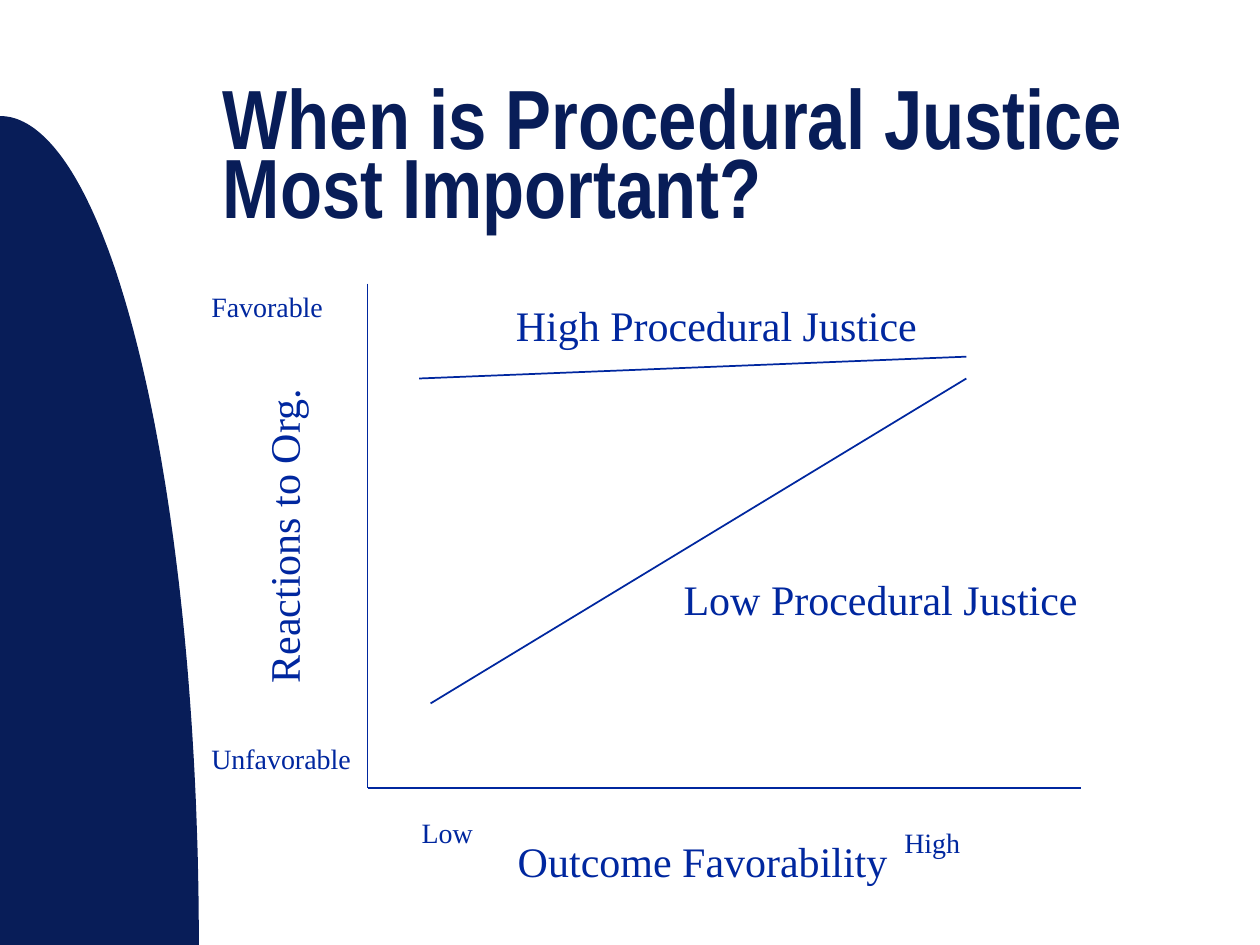
import math

from pptx import Presentation
from pptx import util as u
from pptx.dml.color import RGBColor
from pptx.enum import shapes, text
from pptx.oxml import ns, xmlchemy

NAVY = RGBColor(0x08, 0x1D, 0x58)
BLUE = RGBColor(0x00, 0x27, 0x9F)
HEADING_FONT, LABEL_FONT = "Arial Narrow", "Times New Roman"


def write(frame, wording, size=24, font=LABEL_FONT, color=BLUE, bold=False,
          align=text.PP_ALIGN.LEFT, spacing=None):
    """Fill a text frame with one formatted paragraph."""
    frame.word_wrap = True
    paragraph = frame.paragraphs[0]
    paragraph.alignment = align
    paragraph.line_spacing = spacing
    run = paragraph.add_run()
    run.text = wording
    run.font.size, run.font.name = u.Pt(size), font
    run.font.bold, run.font.color.rgb = bold, color


def add_label(slide, wording, left, top, width, size=24, rotation=0, **style):
    """Place a one-line label, with a height that follows its text size."""
    height = 1.27 if size == 24 else 0.94
    label = slide.shapes.add_textbox(u.Cm(left), u.Cm(top), u.Cm(width), u.Cm(height))
    label.rotation = rotation
    write(label.text_frame, wording, size=size, **style)
    label.text_frame.auto_size = text.MSO_AUTO_SIZE.SHAPE_TO_FIT_TEXT


def add_line(slide, start, end):
    """Draw a thin blue line between two points."""
    line = slide.shapes.add_connector(
        shapes.MSO_CONNECTOR.STRAIGHT, *(u.Cm(value) for value in (*start, *end)))
    line.line.color.rgb = BLUE
    line.line.width = u.Pt(1)
    properties = line._element.find(ns.qn("p:spPr"))
    properties.append(xmlchemy.OxmlElement("a:effectLst"))


def add_side_curve(slide, left, top, width, height, steps=90):
    """Fill a quarter ellipse rising along the left edge."""
    angles = [math.pi / 2 * step / steps for step in range(steps + 1)]
    rim = [(u.Cm(left + width * math.sin(angle)),
            u.Cm(top + height * (1 - math.cos(angle)))) for angle in angles]
    builder = slide.shapes.build_freeform(*rim[0])
    builder.add_line_segments(rim[1:] + [(u.Cm(left), u.Cm(top + height))], close=True)
    curve = builder.convert_to_shape()
    curve.shadow.inherit = False
    curve.fill.solid()
    curve.fill.fore_color.rgb = NAVY
    curve.line.fill.background()


def add_title(slide, wording, left, top, width, height):
    """Move and format the title placeholder."""
    title = slide.shapes.title
    title.left, title.top = u.Cm(left), u.Cm(top)
    title.width, title.height = u.Cm(width), u.Cm(height)
    title.text_frame.auto_size = text.MSO_AUTO_SIZE.NONE
    title.text_frame.vertical_anchor = text.MSO_ANCHOR.MIDDLE
    write(title.text_frame, wording, size=48, font=HEADING_FONT, color=NAVY,
          bold=True, spacing=0.69)


def add_justice_plot(slide, left, top, width, height):
    """Draw the axes, the two justice lines and their labels."""
    origin = (left, top + height)
    add_line(slide, (left, top), origin)
    add_line(slide, origin, (left + width, top + height))

    trend_end = left + 12.07
    add_line(slide, (left + 1.04, top + 1.91), (trend_end, top + 1.47))
    add_line(slide, (trend_end, top + 1.91), (left + 1.27, top + 8.46))

    add_label(slide, "High Procedural Justice", left + 2.74, top + 0.2, 10.36)
    add_label(slide, "Low Procedural Justice", left + 6.12, top + 5.72, 9.09)
    add_label(slide, "Outcome Favorability", left - 1.5, top + 11, 16.51,
              align=text.PP_ALIGN.CENTER)
    add_label(slide, "Reactions to Org.", left - 5, top + 4.37, 6.6, rotation=270)

    for wording, across, down in (("Low", 0.84, 10.59), ("High", 10.57, 10.8),
                                  ("Favorable", -3.4, 0), ("Unfavorable", -3.4, 9.1)):
        add_label(slide, wording, left + across, top + down, 4.65, size=16)


def main():
    """Build and save the slide."""
    deck = Presentation()
    deck.slide_width, deck.slide_height = u.Cm(25.4), u.Cm(19.05)
    slide = deck.slides.add_slide(deck.slide_layouts.get_by_name("Title Only"))
    add_side_curve(slide, 0, 2.34, 4.01, 16.71)
    add_title(slide, "When is Procedural Justice Most Important?", 4.24, 1.7, 20.52, 3.18)
    add_justice_plot(slide, 7.41, 5.72, 14.39, 10.16)
    deck.save("out.pptx")


if __name__ == "__main__":
    main()
